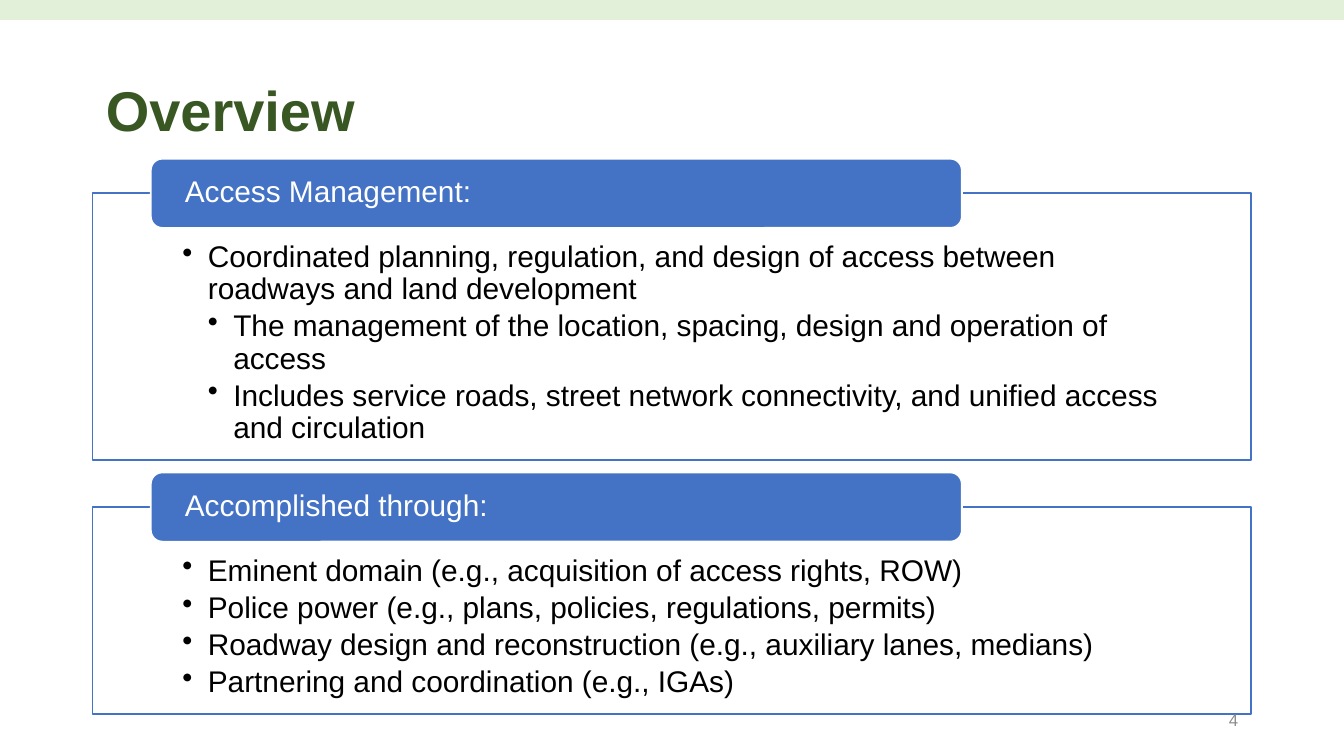
"""Build the access management overview slide."""
from dataclasses import dataclass

from lxml.etree import SubElement
from pptx import Presentation
from pptx.dml.color import RGBColor
from pptx.enum.shapes import MSO_SHAPE
from pptx.enum.text import MSO_ANCHOR, PP_ALIGN
from pptx.oxml.ns import qn
from pptx.util import Cm, Pt


@dataclass(frozen=True)
class Theme:
    font: str = "Arial"
    band: str = "E2F0D9"
    title: str = "385723"
    blue: str = "4472C4"
    white: str = "FFFFFF"
    black: str = "000000"
    gray: str = "8C8C8C"
    head: int = 30
    body: int = 16
    small: int = 9


class Deck:
    def __init__(self, theme, slide):
        self.theme = theme
        self.slide = slide

    def style(self, item, size, color, bold=False):
        for run in item.runs:
            run.font.name = self.theme.font
            run.font.size = Pt(size)
            run.font.bold = bold
            run.font.color.rgb = RGBColor.from_string(color)

    def shape(self, kind, box, fill, line=None):
        shape = self.slide.shapes.add_shape(kind, *map(Cm, box))
        shape.shadow.inherit = False
        shape.fill.solid()
        shape.fill.fore_color.rgb = RGBColor.from_string(fill)
        if line:
            shape.line.color.rgb = RGBColor.from_string(line)
            shape.line.width = Pt(1)
        else:
            shape.line.fill.background()
        return shape

    def label(self, box, text, size, color, bold=False, align=PP_ALIGN.LEFT):
        frame = self.slide.shapes.add_textbox(*map(Cm, box)).text_frame
        frame.word_wrap = True
        frame.vertical_anchor = MSO_ANCHOR.MIDDLE
        frame.text = text
        item = frame.paragraphs[0]
        item.alignment = align
        item.line_spacing = 0.9 if bold else 1
        self.style(item, size, color, bold)

    def bullet(self, item, text, level):
        item.text = text
        item.level = level
        item.alignment = PP_ALIGN.LEFT
        item.line_spacing = 0.9
        item.space_before = Pt(0)
        item.space_after = Pt(2.7)
        props = item._p.get_or_add_pPr()
        props.set("marL", str(Cm(0.48 * level)))
        props.set("indent", str(Cm(-0.48)))
        SubElement(props, qn("a:buChar"), char="•")
        self.style(item, self.theme.body, self.theme.black)

    def panel(self, top, height, rows):
        box = (1.75, top, 21.89, height)
        shape = self.shape(MSO_SHAPE.RECTANGLE, box, self.theme.white, self.theme.blue)
        tint = shape.fill._xPr.find(qn("a:solidFill"))[0]
        SubElement(tint, qn("a:alpha"), val="90000")
        frame = shape.text_frame
        frame.word_wrap = True
        frame.vertical_anchor = MSO_ANCHOR.TOP
        frame.margin_left = frame.margin_right = Cm(1.7)
        frame.margin_top, frame.margin_bottom = Cm(0.92), Cm(0.3)
        for i, (level, text) in enumerate(rows):
            item = frame.add_paragraph() if i else frame.paragraphs[0]
            self.bullet(item, text, level)

    def tab(self, top, text):
        box = (2.85, top, 15.33, 1.31)
        shape = self.shape(MSO_SHAPE.ROUNDED_RECTANGLE, box, self.theme.blue, self.theme.white)
        frame = shape.text_frame
        frame.word_wrap = True
        frame.vertical_anchor = MSO_ANCHOR.MIDDLE
        frame.margin_left = frame.margin_right = Cm(0.58)
        frame.margin_top = frame.margin_bottom = 0
        frame.text = text
        item = frame.paragraphs[0]
        item.alignment = PP_ALIGN.LEFT
        item.line_spacing = 0.9
        self.style(item, self.theme.body, self.theme.white)


def main():
    show = Presentation()
    show.slide_width, show.slide_height = Cm(25.4), Cm(14.29)
    theme = Theme()
    deck = Deck(theme, show.slides.add_slide(show.slide_layouts[6]))
    deck.shape(MSO_SHAPE.RECTANGLE, (0, 0, 25.4, 0.38), theme.band)
    deck.label((1.75, 0.76, 21.89, 2.77), "Overview", theme.head, theme.title, bold=True)

    groups = [
        ("Access Management:", 3.65, 5.04, [
            (1, "Coordinated planning, regulation, and design of access between roadways and land development"),
            (2, "The management of the location, spacing, design and operation of access"),
            (2, "Includes service roads, street network connectivity, and unified access and circulation"),
        ]),
        ("Accomplished through:", 9.58, 3.92, [
            (1, "Eminent domain (e.g., acquisition of access rights, ROW)"),
            (1, "Police power (e.g., plans, policies, regulations, permits)"),
            (1, "Roadway design and reconstruction (e.g., auxiliary lanes, medians)"),
            (1, "Partnering and coordination (e.g., IGAs)"),
        ]),
    ]
    for name, top, height, rows in groups:
        deck.panel(top, height, rows)
        deck.tab(top - 0.65, name)

    deck.label((17.93, 13.23, 5.72, 0.76), "4", theme.small, theme.gray, align=PP_ALIGN.RIGHT)
    show.save("out.pptx")


if __name__ == "__main__":
    main()
